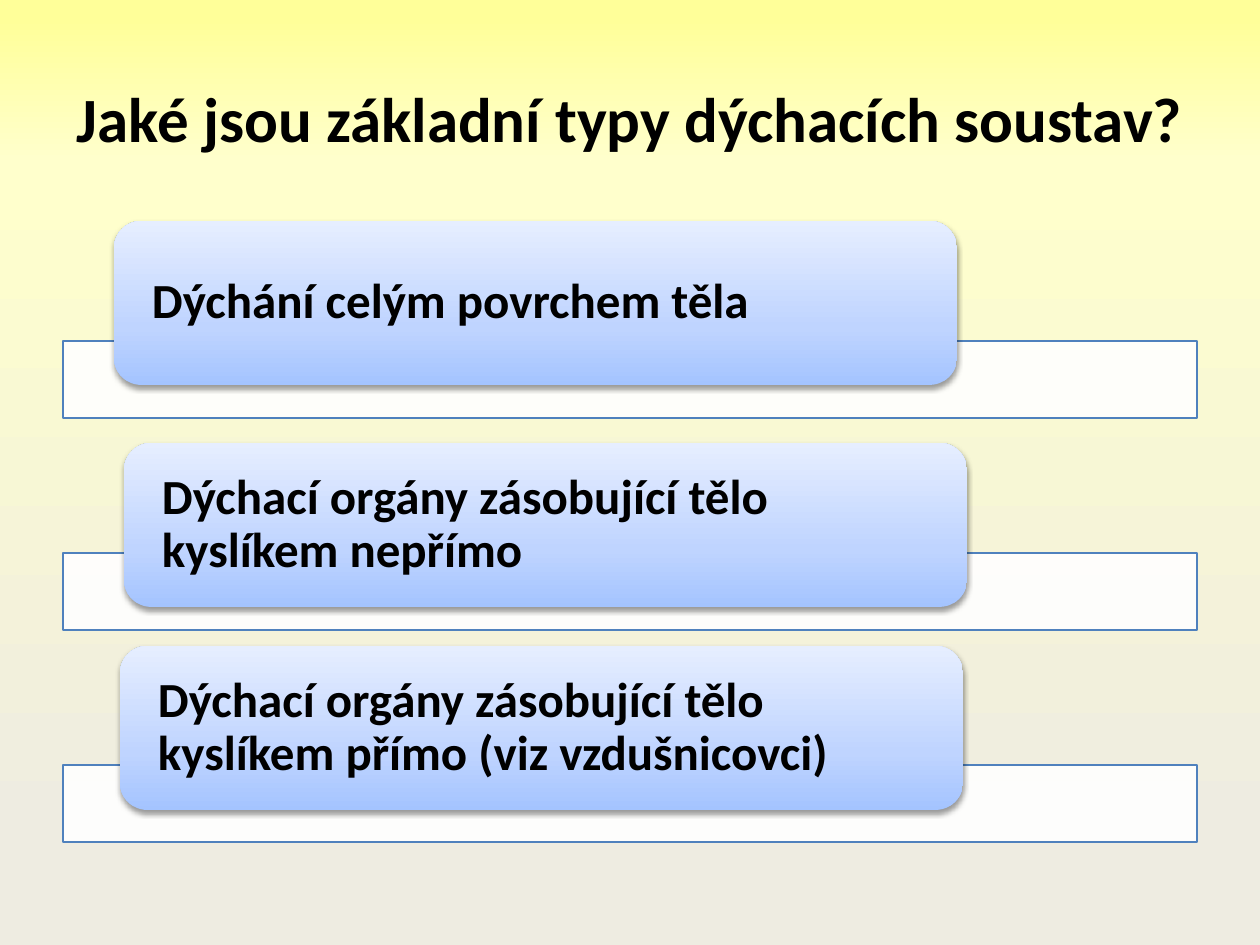
from lxml.etree import SubElement
from pptx import Presentation
from pptx.dml.color import RGBColor
from pptx.enum.shapes import MSO_SHAPE
from pptx.enum.text import MSO_ANCHOR, PP_ALIGN
from pptx.oxml.ns import qn
from pptx.util import Pt

EMU_PER_PX = 914400 / 126
FONT = "Calibri"
COLORS = {
    "text": "000000",
    "shadow": "000000",
    "bar": "FFFFFF",
    "bar_line": "4F81BD",
}
BACKGROUND_STOPS = [(2, "FFFF99"), (17, "FFFFCC"), (90, "EEECE1")]
CARD_STOPS = [(0, "A4C4FF"), (35, "BFD4FF"), (100, "E6EEFF")]
TITLE = "Jaké jsou základní typy dýchacích soustav?"
CARDS = [
    (114, 221, "Dýchání celým povrchem těla"),
    (124, 443, "Dýchací orgány zásobující tělo kyslíkem nepřímo"),
    (120, 646, "Dýchací orgány zásobující tělo kyslíkem přímo (viz vzdušnicovci)"),
]
BAR_TOP, BAR_STEP = 341, 212


def px(length):
    """Turn pixels into EMU."""
    return round(length * EMU_PER_PX)


def rgb(name):
    """Look up a named colour."""
    return RGBColor.from_string(COLORS[name])


def set_gradient(fill, owner, stops, angle):
    """Fill the owner element with a linear gradient, its angle clockwise."""
    fill.gradient()
    gradient = next(owner.iter(qn("a:gradFill")))
    stop_list = gradient.find(qn("a:gsLst"))
    for stop in list(stop_list):
        stop_list.remove(stop)
    for position, color in stops:
        stop = SubElement(stop_list, qn("a:gs"), pos=str(position * 1000))
        SubElement(stop, qn("a:srgbClr"), val=color)
    gradient.find(qn("a:lin")).set("ang", str(angle * 60000))


def add_shadow(shape):
    """Give a shape a soft shadow below it."""
    shape.shadow.inherit = False
    effects = shape._element.spPr.find(qn("a:effectLst"))
    shadow = SubElement(effects, qn("a:outerShdw"), blurRad="40000", dist="20000",
                        dir="5400000", rotWithShape="0")
    color = SubElement(shadow, qn("a:srgbClr"), val=COLORS["shadow"])
    SubElement(color, qn("a:alpha"), val="38000")


def write_text(shape, text, size, alignment):
    """Write one bold paragraph, centred vertically."""
    frame = shape.text_frame
    frame.word_wrap = True
    frame.vertical_anchor = MSO_ANCHOR.MIDDLE
    paragraph = frame.paragraphs[0]
    paragraph.text = text
    paragraph.alignment = alignment
    paragraph.font.name = FONT
    paragraph.font.size = Pt(size)
    paragraph.font.bold = True
    paragraph.font.color.rgb = rgb("text")
    return frame, paragraph


def add_title(slide):
    """Place and write the slide title."""
    title = slide.shapes.title
    title.left, title.top, title.width, title.height = map(px, (63, 38, 1134, 158))
    write_text(title, TITLE, 36, PP_ALIGN.CENTER)


def add_bar(slide, top):
    """Add a translucent outlined bar across the slide."""
    bar = slide.shapes.add_shape(MSO_SHAPE.RECTANGLE, *map(px, (63, top, 1134, 77)))
    bar.shadow.inherit = False
    bar.fill.solid()
    bar.fill.fore_color.rgb = rgb("bar")
    color = next(bar._element.spPr.iter(qn("a:srgbClr")))
    SubElement(color, qn("a:alpha"), val="90000")
    bar.line.color.rgb = rgb("bar_line")
    bar.line.width = Pt(0.75)


def add_card(slide, left, top, text):
    """Add a rounded card that holds a respiration type."""
    card = slide.shapes.add_shape(MSO_SHAPE.ROUNDED_RECTANGLE, *map(px, (left, top, 843, 164)))
    set_gradient(card.fill, card._element.spPr, CARD_STOPS, 270)
    card.line.fill.background()
    add_shadow(card)
    frame, paragraph = write_text(card, text, 28, PP_ALIGN.LEFT)
    frame.margin_left = frame.margin_right = px(30)
    frame.margin_top = frame.margin_bottom = 0
    paragraph.line_spacing = 0.9


def main():
    """Build and save the slide."""
    presentation = Presentation()
    presentation.slide_width, presentation.slide_height = px(1260), px(945)
    slide = presentation.slides.add_slide(presentation.slide_layouts[5])
    set_gradient(slide.background.fill, slide._element, BACKGROUND_STOPS, 90)
    add_title(slide)
    for index, (left, top, text) in enumerate(CARDS):
        add_bar(slide, BAR_TOP + index * BAR_STEP)
        add_card(slide, left, top, text)
    presentation.save("out.pptx")


if __name__ == "__main__":
    main()
